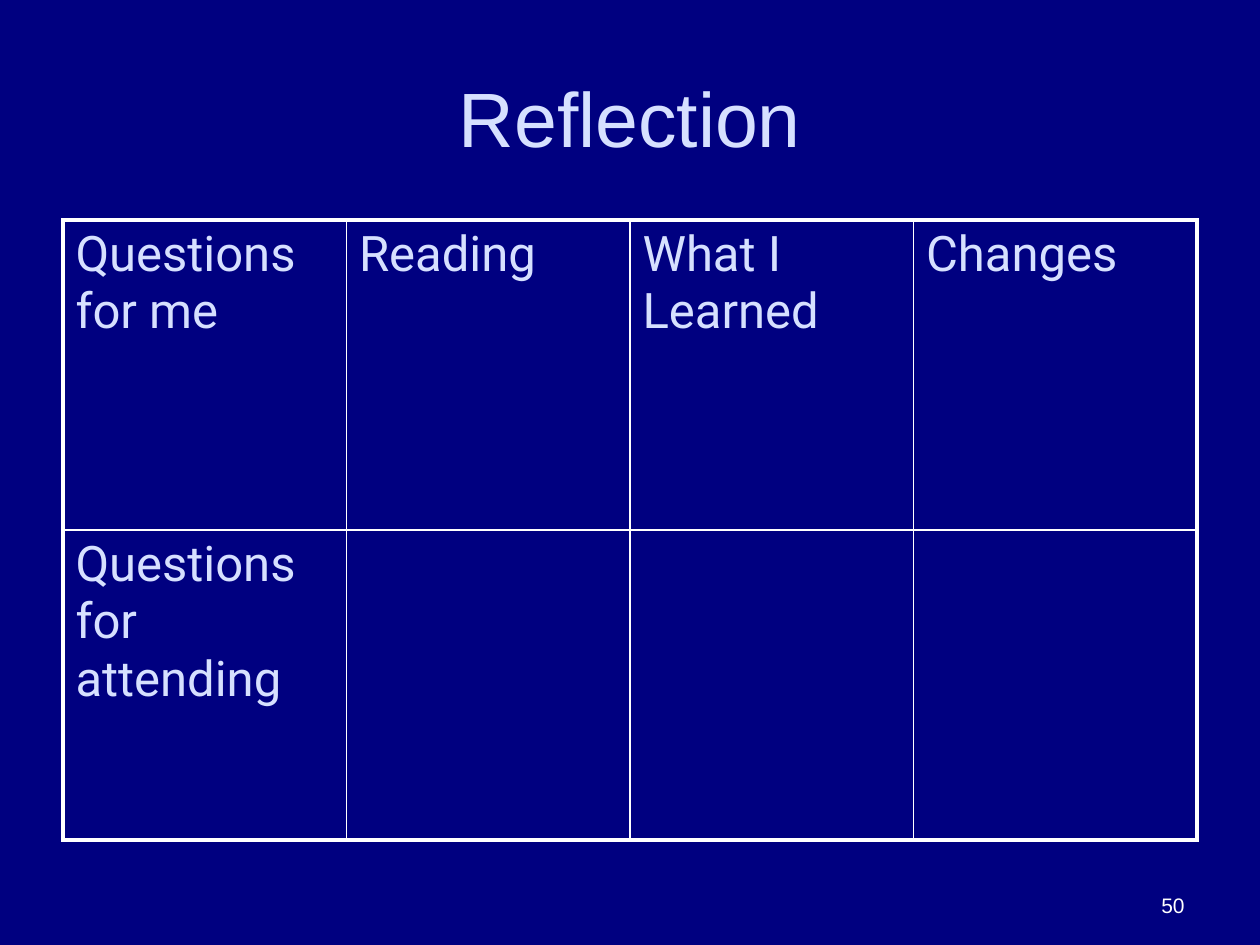
"""Build the Reflection slide: a title, a two-by-four grid and a page number."""
from dataclasses import dataclass

from lxml import etree
from pptx import Presentation
from pptx import util as u
from pptx.dml.color import RGBColor
from pptx.enum import text
from pptx.oxml.ns import qn

NAVY = RGBColor(0x00, 0x00, 0x80)
PALE = RGBColor(0xD6, 0xE0, 0xFF)
WHITE = RGBColor(0xFF, 0xFF, 0xFF)
PX_PER_INCH = 126
THIN, THICK = 1, 2.25
ROWS = [
    ["Questions for me", "Reading", "What I Learned", "Changes"],
    ["Questions for attending", "", "", ""],
]


def px(n: int) -> u.Emu:
    return u.Emu(round(n * u.Inches(1) / PX_PER_INCH))


@dataclass(frozen=True)
class Box:
    left: int
    top: int
    width: int
    height: int

    def emu(self) -> list[u.Emu]:
        return [px(n) for n in (self.left, self.top, self.width, self.height)]


@dataclass(frozen=True)
class Style:
    font: str
    size: int
    color: RGBColor
    align: text.PP_ALIGN


TITLE_BOX = Box(63, 38, 1134, 158)
GRID_BOX = Box(63, 220, 1134, 620)
NUMBER_BOX = Box(903, 861, 294, 63)
TITLE = Style("Arial", 44, PALE, text.PP_ALIGN.CENTER)
CELL = Style("Roboto", 28, PALE, text.PP_ALIGN.LEFT)
NUMBER = Style("Arial", 12, WHITE, text.PP_ALIGN.RIGHT)


def write(tf, words: str, style: Style) -> None:
    p = tf.paragraphs[0]
    p.text = words
    p.alignment = style.align
    p.font.name = style.font
    p.font.size = u.Pt(style.size)
    p.font.color.rgb = style.color


def add_border(cell, side: str, points: float) -> None:
    tc_pr = cell._tc.get_or_add_tcPr()
    ln = etree.SubElement(tc_pr, qn(f"a:ln{side}"), w=str(u.Pt(points)))
    fill = etree.SubElement(ln, qn("a:solidFill"))
    etree.SubElement(fill, qn("a:srgbClr"), val=str(WHITE))


def add_grid(slide, box: Box, rows: list[list[str]]) -> None:
    n_rows, n_cols = len(rows), len(rows[0])
    table = slide.shapes.add_table(n_rows, n_cols, *box.emu()).table
    table.first_row = table.horz_banding = False
    for i, row in enumerate(rows):
        for j, words in enumerate(row):
            cell = table.cell(i, j)
            outer = {"L": j == 0, "R": j == n_cols - 1, "T": i == 0, "B": i == n_rows - 1}
            for side, is_outer in outer.items():
                add_border(cell, side, THICK if is_outer else THIN)
            cell.fill.background()
            write(cell.text_frame, words, CELL)


def main() -> None:
    prs = Presentation()
    prs.slide_width, prs.slide_height = u.Inches(10), u.Inches(7.5)
    slide = prs.slides.add_slide(prs.slide_layouts[5])
    slide.background.fill.solid()
    slide.background.fill.fore_color.rgb = NAVY

    title = slide.shapes.title
    title.left, title.top, title.width, title.height = TITLE_BOX.emu()
    title.text_frame.vertical_anchor = text.MSO_ANCHOR.MIDDLE
    write(title.text_frame, "Reflection", TITLE)

    add_grid(slide, GRID_BOX, ROWS)

    tf = slide.shapes.add_textbox(*NUMBER_BOX.emu()).text_frame
    tf.word_wrap = True
    tf.vertical_anchor = text.MSO_ANCHOR.BOTTOM
    write(tf, "50", NUMBER)
    prs.save("out.pptx")


if __name__ == "__main__":
    main()
